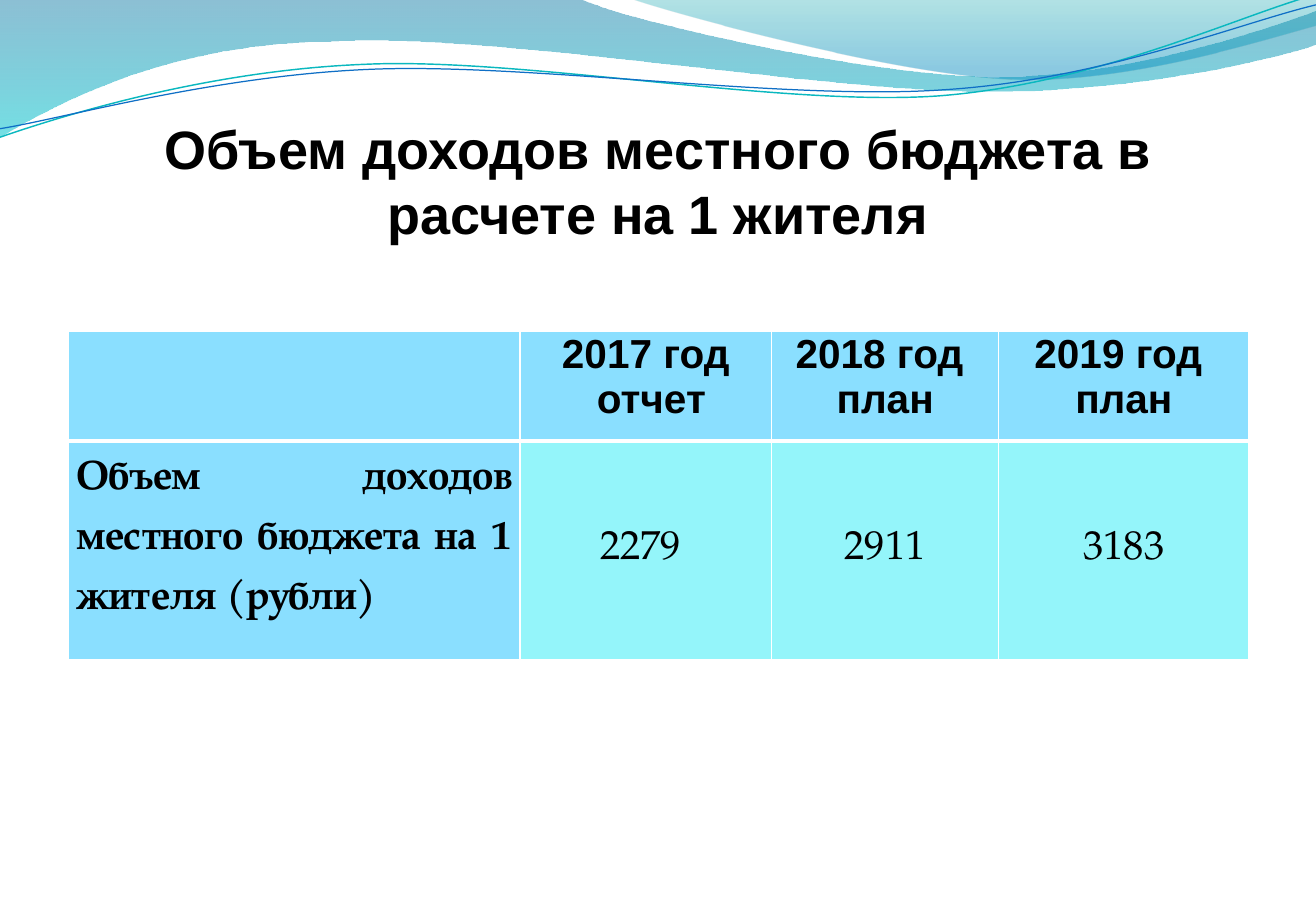
import math

import pptx
import pptx.util
import pptx.dml.color
import pptx.enum.text
import pptx.oxml
import pptx.oxml.ns

Inches, Pt = pptx.util.Inches, pptx.util.Pt
RGB = pptx.dml.color.RGBColor.from_string
ALIGN, ANCHOR = pptx.enum.text.PP_ALIGN, pptx.enum.text.MSO_ANCHOR
qn, nsdecls = pptx.oxml.ns.qn, pptx.oxml.ns.nsdecls

TITLE = "Объем доходов местного бюджета в расчете на 1 жителя"
HEADER = [[], ["2017 год", " отчет"], ["2018 год ", "план"], ["2019 год ", "план"]]
BODY = [["Объем доходов местного бюджета на 1 жителя (рубли)"], ["2279 "], ["2911"], ["3183"]]
COLUMNS = [3.72, 2.07, 1.87, 2.06]
ROWS = [0.9, 1.8]

THEME = {
    "text": "000000", "header": "8ADFFF", "value": "94F5FA", "border": "FFFFFF",
    "sans": "Arial", "serif": "TeX Gyre Pagella", "title_size": 32, "table_size": 24,
    "wave": [(0, "0074A1", 45), (100, "00C6CF", 55)],
    "crest": [(0, "00A1A9", 30), (80, "008BBF", 45)],
    "teal_line": ("0AB8BF", 0.85), "blue_line": ("0F6FC6", 0.75),
}

BANDS = [
    ("wave", [[(0, -0.01)], [(4.77, -0.01)],
              [(5.15, 0.17), (7.19, 0.63), (8.22, 0.63)],
              [(9.24, 0.63), (10.38, 0.26), (10.83, 0.09)], [(10.85, 0.36)],
              [(10.65, 0.44), (9.42, 0.76), (8.08, 0.75)],
              [(6.74, 0.75), (4.14, 0.28), (2.79, 0.34)],
              [(1.4, 0.35), (0.5, 0.83), (-0.01, 1.13)]]),
    ("crest", [[(5.19, -0.01)],
               [(5.52, 0.11), (7.39, 0.62), (8.33, 0.65)],
               [(9.27, 0.69), (10.42, 0.32), (10.83, 0.21)], [(10.83, 0)]]),
]
CURVES = [
    ("teal_line", (5.41, 0.58),
     [[(0, 1.13)], [(0.52, 0.95), (1.71, 0.58), (3, 0.53)],
      [(4.28, 0.47), (6.42, 0.88), (7.72, 0.79)],
      [(9.02, 0.69), (10.17, 0.14), (10.81, -0.04)]]),
    ("blue_line", (5.42, 0.59),
     [[(0, 1.06)], [(0.51, 0.98), (1.77, 0.62), (3.07, 0.57)],
      [(4.36, 0.52), (6.47, 0.83), (7.76, 0.74)],
      [(9.06, 0.66), (10.2, 0.19), (10.83, 0.04)]]),
]
TILT = -2.7


def turn(point, center, degrees):
    a = math.radians(degrees)
    dx, dy = point[0] - center[0], point[1] - center[1]
    return (center[0] + dx * math.cos(a) - dy * math.sin(a),
            center[1] + dx * math.sin(a) + dy * math.cos(a))


def add_outline(s, segments, close):
    points = [(Inches(x), Inches(y)) for seg in segments for x, y in seg]
    builder = s.shapes.build_freeform(*points[0])
    builder.add_line_segments(points[1:], close=close)
    sp = builder.convert_to_shape()
    lines = iter(list(sp._element.iter(qn("a:lnTo"))))
    for seg in segments[1:]:
        first, *others = [next(lines) for _ in seg]
        if others:
            bezier = pptx.oxml.parse_xml(f'<a:cubicBezTo {nsdecls("a")}/>')
            first.addprevious(bezier)
            for line in (first, *others):
                bezier.append(line[0])
                line.getparent().remove(line)
    sp.shadow.inherit = False
    sp.fill.background()
    sp.line.fill.background()
    return sp


def set_gradient(sp, stops):
    gs = "".join(
        f'<a:gs pos="{pos * 1000}"><a:srgbClr val="{color}">'
        f'<a:alpha val="{alpha * 1000}"/></a:srgbClr></a:gs>' for pos, color, alpha in stops)
    fill = pptx.oxml.parse_xml(
        f'<a:gradFill {nsdecls("a")} rotWithShape="1"><a:gsLst>{gs}</a:gsLst>'
        '<a:lin ang="5400000" scaled="0"/></a:gradFill>')
    no_fill = sp._element.spPr.find(qn("a:noFill"))
    no_fill.getparent().replace(no_fill, fill)


def add_waves(s):
    for name, segments in BANDS:
        set_gradient(add_outline(s, segments, True), THEME[name])
    for name, center, segments in CURVES:
        level = [[turn(point, center, -TILT) for point in seg] for seg in segments]
        sp = add_outline(s, level, False)
        sp.rotation = TILT
        color, width = THEME[name]
        sp.line.color.rgb = RGB(color)
        sp.line.width = Pt(width)


def add_text(p, text, font, size, bold, align):
    p.alignment = align
    r = p.add_run()
    r.text = text
    r.font.name, r.font.size, r.font.bold = font, Pt(size), bold
    r.font.color.rgb = RGB(THEME["text"])


def set_borders(cell, **widths):
    tc_pr = cell._tc.get_or_add_tcPr()
    for side in "LRTB":
        tc_pr.append(pptx.oxml.parse_xml(
            f'<a:ln{side} {nsdecls("a")} w="{Pt(widths.get(side, 1))}">'
            f'<a:solidFill><a:srgbClr val="{THEME["border"]}"/></a:solidFill></a:ln{side}>'))


def add_title(s):
    sp = s.shapes.title
    sp.left, sp.top, sp.width, sp.height = map(Inches, (0.54, 0.77, 9.75, 1.25))
    tf = sp.text_frame
    tf.word_wrap = True
    tf.auto_size = pptx.enum.text.MSO_AUTO_SIZE.NONE
    tf.vertical_anchor = ANCHOR.BOTTOM
    tf.margin_left = tf.margin_right = tf.margin_bottom = 0
    tf.margin_top = Inches(0.05)
    add_text(tf.paragraphs[0], TITLE, THEME["sans"], THEME["title_size"], True, ALIGN.CENTER)


def add_income_table(s):
    table = s.shapes.add_table(len(ROWS), len(COLUMNS), Inches(0.56), Inches(2.73),
                               Inches(sum(COLUMNS)), Inches(sum(ROWS))).table
    for column, width in zip(table.columns, COLUMNS):
        column.width = Inches(width)
    for row, height in zip(table.rows, ROWS):
        row.height = Inches(height)
    for i, row in enumerate((HEADER, BODY)):
        for j, lines in enumerate(row):
            cell = table.cell(i, j)
            is_header, is_label = i == 0, j == 0
            is_value = not (is_header or is_label)
            set_borders(cell, **({"B": 3} if is_header else {"T": 3}))
            cell.fill.solid()
            cell.fill.fore_color.rgb = RGB(THEME["value" if is_value else "header"])
            cell.margin_left = cell.margin_right = Inches(0.07)
            cell.margin_top = cell.margin_bottom = 0
            cell.vertical_anchor = ANCHOR.MIDDLE if is_value else ANCHOR.TOP
            tf = cell.text_frame
            for n, line in enumerate(lines):
                p = tf.add_paragraph() if n else tf.paragraphs[0]
                add_text(p, line, THEME["sans" if is_header else "serif"], THEME["table_size"],
                         not is_value, ALIGN.JUSTIFY if is_label else ALIGN.CENTER)
                if is_label:
                    p.line_spacing = 1.5


def main():
    prs = pptx.Presentation()
    prs.slide_width, prs.slide_height = Inches(10.83), Inches(7.5)
    s = prs.slides.add_slide(prs.slide_layouts[5])
    add_waves(s)
    add_title(s)
    add_income_table(s)
    prs.save("out.pptx")


if __name__ == "__main__":
    main()
